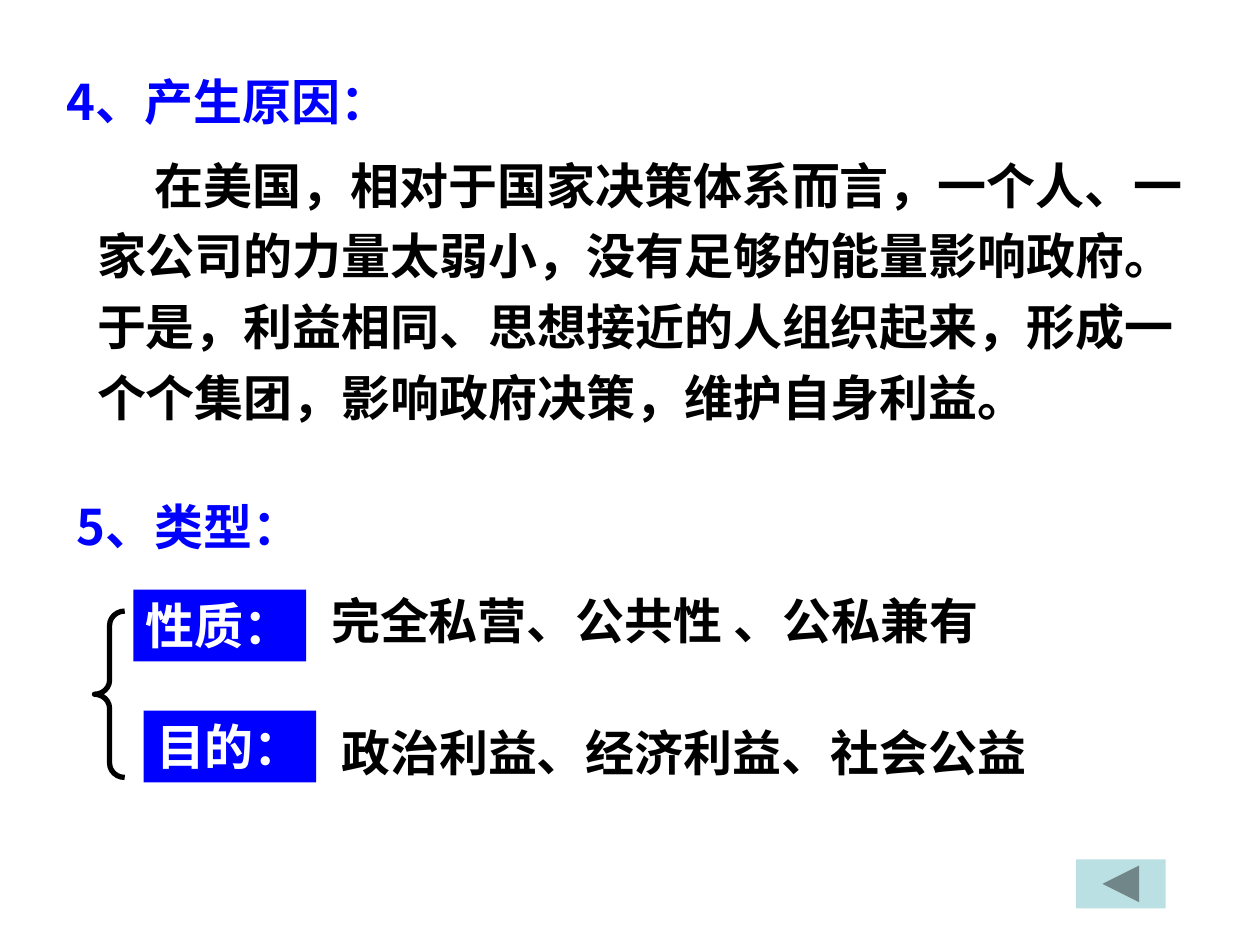
from pptx import Presentation
from pptx.dml.color import RGBColor
from pptx.enum.shapes import MSO_SHAPE as Preset
from pptx.enum.text import MSO_ANCHOR as Anchor, MSO_AUTO_SIZE as AutoSize, PP_ALIGN as Align
from pptx.oxml.ns import qn
from pptx.util import Inches, Pt
from lxml.etree import SubElement

CJK = "Noto Sans CJK SC"
COLORS = {"blue": "0000FF", "black": "000000", "white": "FFFFFF", "button": "BBE0E3"}

CAUSE_HEADING = ("4、产生原因：", (0.43, 0.52, 2.94, 0.57))
CAUSE = (
    "在美国，相对于国家决策体系而言，一个人、一家公司的力量太弱小，没有足够的能量影响政府。"
    "于是，利益相同、思想接近的人组织起来，形成一个个集团，影响政府决策，维护自身利益。",
    (0.67, 1.09, 8.84, 2.34),
)
TYPE_HEADING = ("5、类型：", (0.51, 3.89, 2.12, 0.57))
# label, its left and top; examples, their left and top
TYPES = [
    ("性质：", (1.06, 4.68), "完全私营、公共性 、公私兼有", (2.24, 4.54)),
    ("目的：", (1.14, 5.64), "政治利益、经济利益、社会公益", (2.32, 5.59)),
]
LABEL_SIZE = (1.37, 0.57)
EXAMPLES_SIZE = (6.6, 0.66)
BRACE = (0.75, 4.85, 0.24, 1.32)
BACK_BUTTON = (8.54, 6.82, 0.71, 0.39)


def color(name):
    return RGBColor.from_string(COLORS[name])


def inches(box):
    return [Inches(length) for length in box]


def write(shape, text, ink, font=CJK, anchor=Anchor.TOP, spacing=1.0, indent=0, wrap=True):
    frame = shape.text_frame
    frame.text = text
    frame.word_wrap = wrap
    frame.auto_size = AutoSize.NONE
    frame.vertical_anchor = anchor
    paragraph = frame.paragraphs[0]
    paragraph.alignment = Align.LEFT
    paragraph.line_spacing = spacing
    paragraph.space_before = Pt(0)
    properties = paragraph._p.get_or_add_pPr()
    properties.set("marL", "0")
    properties.set("indent", str(Inches(indent)))
    SubElement(properties, qn("a:buNone"))
    run = paragraph.runs[0]
    run.font.name = font
    run.font.size = Pt(28)
    run.font.bold = True
    run.font.color.rgb = color(ink)
    SubElement(run._r.get_or_add_rPr(), qn("a:ea"), typeface=CJK)


def place(shape, box):
    shape.left, shape.top, shape.width, shape.height = inches(box)
    return shape


def add_preset(slide, preset, box, fill=None):
    shape = slide.shapes.add_shape(preset, *inches(box))
    shape.shadow.inherit = False
    if fill:
        shape.fill.solid()
        shape.fill.fore_color.rgb = color(fill)
        shape.line.fill.background()
    else:
        shape.fill.background()
    return shape


def main():
    deck = Presentation()
    deck.slide_width, deck.slide_height = Inches(10), Inches(7.5)
    slide = deck.slides.add_slide(deck.slide_layouts[1])

    heading, box = CAUSE_HEADING
    write(place(slide.shapes.title, box), heading, "blue")
    cause, box = CAUSE
    write(place(slide.placeholders[1], box), cause, "black",
          anchor=Anchor.MIDDLE, spacing=1.2, indent=0.46)
    heading, box = TYPE_HEADING
    write(slide.shapes.add_textbox(*inches(box)), heading, "blue")

    brace = add_preset(slide, Preset.LEFT_BRACE, BRACE)
    brace.adjustments[0] = 0.47
    brace.line.color.rgb = color("black")
    brace.line.width = Pt(3)

    for label, label_at, examples, examples_at in TYPES:
        examples_box = slide.shapes.add_textbox(*inches(examples_at + EXAMPLES_SIZE))
        write(examples_box, examples, "black", anchor=Anchor.MIDDLE, spacing=1.2, indent=0.29)
        label_box = add_preset(slide, Preset.RECTANGLE, label_at + LABEL_SIZE, "blue")
        write(label_box, label, "white", font="Arial", wrap=False)

    add_preset(slide, Preset.ACTION_BUTTON_BACK_OR_PREVIOUS, BACK_BUTTON, "button")
    deck.save("out.pptx")


if __name__ == "__main__":
    main()
